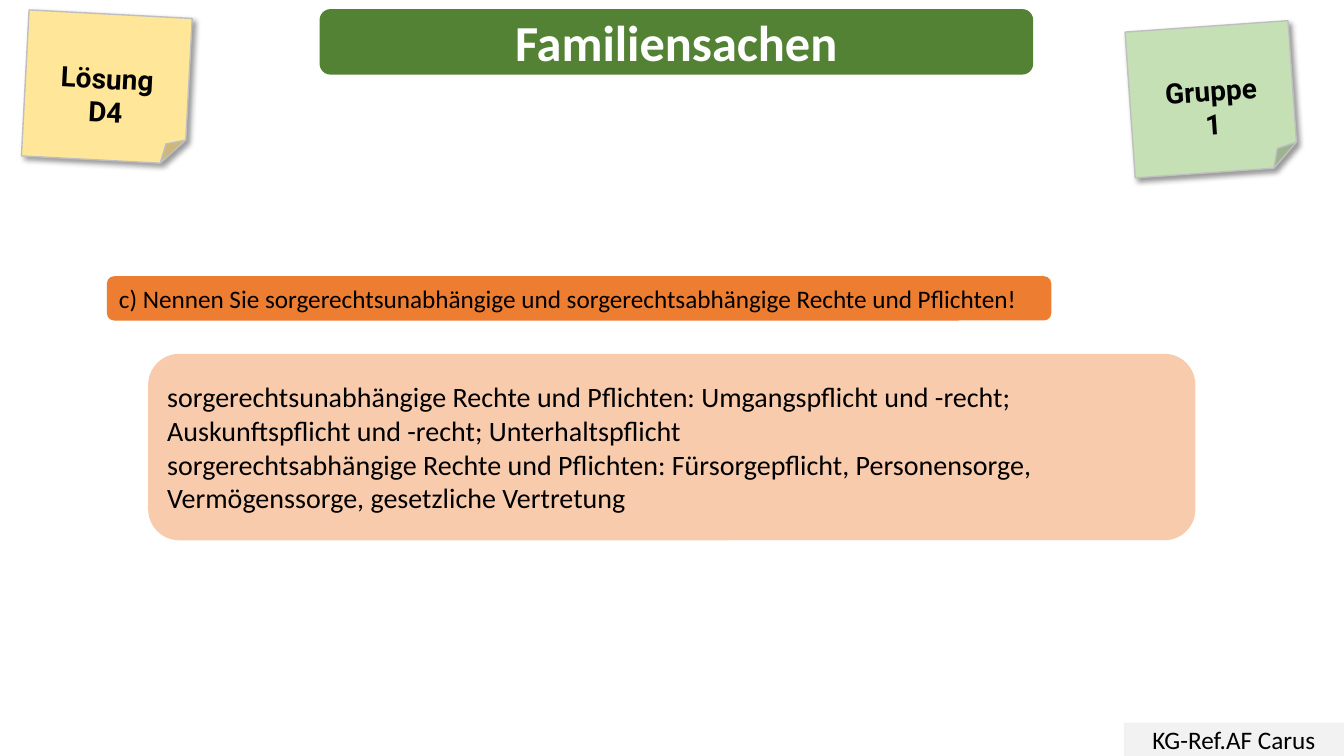
"""Build the Familiensachen solution slide."""
import dataclasses

import lxml.etree
import pptx
import pptx.dml.color
import pptx.enum.shapes
import pptx.enum.text
import pptx.oxml.ns
import pptx.shapes.autoshape
import pptx.slide
import pptx.text.text
import pptx.util

Color = pptx.dml.color.RGBColor
Shape = pptx.enum.shapes.MSO_SHAPE
Align = pptx.enum.text.PP_ALIGN

WIDTH = pptx.util.Inches(13.333)
HEIGHT = pptx.util.Inches(7.5)
COLUMNS, ROWS = 160, 90

BLACK = Color(0x00, 0x00, 0x00)
WHITE = Color(0xFF, 0xFF, 0xFF)
GREEN = Color(0x54, 0x82, 0x35)
ORANGE = Color(0xED, 0x7D, 0x31)
PEACH = Color(0xF8, 0xCB, 0xAD)
YELLOW = Color(0xFF, 0xE6, 0x99)
LIGHT_GREEN = Color(0xC5, 0xE0, 0xB4)
LIGHT_GRAY = Color(0xF2, 0xF2, 0xF2)
NOTE_EDGE = Color(0xBF, 0xBF, 0xBF)


@dataclasses.dataclass(frozen=True)
class Area:
    """Place on the grid, in columns and rows."""
    column: float
    row: float
    columns: float
    rows: float

    def emu(self) -> tuple[int, int, int, int]:
        """Return left, top, width and height as lengths."""
        return (round(WIDTH * self.column / COLUMNS), round(HEIGHT * self.row / ROWS),
                round(WIDTH * self.columns / COLUMNS), round(HEIGHT * self.rows / ROWS))


@dataclasses.dataclass(frozen=True)
class Style:
    """Look of the text in a box."""
    size: float
    color: Color = BLACK
    font: str = "Calibri"
    bold: bool = False
    align: Align = Align.CENTER


@dataclasses.dataclass(frozen=True)
class Panel:
    """Filled box with its paragraphs."""
    area: Area
    fill: Color
    style: Style
    lines: tuple[str, ...] = ()
    kind: Shape = Shape.ROUNDED_RECTANGLE


@dataclasses.dataclass(frozen=True)
class Note:
    """Tilted sticky note."""
    column: float
    row: float
    rotation: float
    fill: Color
    lines: tuple[str, ...]


TITLE_AREA = Area(38.04, 1.08, 84.96, 7.8)
TITLE_STYLE = Style(36, WHITE, bold=True)
NOTE_STYLE = Style(20, font="Roboto", bold=True)

PANELS = (
    Panel(TITLE_AREA, GREEN, TITLE_STYLE),
    Panel(Area(133.8, 86.04, 26.2, 3.96), LIGHT_GRAY, Style(18),
          ("KG-Ref.AF Carus",), Shape.RECTANGLE),
    Panel(Area(12.72, 32.88, 112.44, 5.28), ORANGE, Style(18, align=Align.LEFT),
          ("c) Nennen Sie sorgerechtsunabhängige und sorgerechtsabhängige "
           "Rechte und Pflichten!",)),
    Panel(Area(17.64, 42.12, 124.68, 22.2), PEACH, Style(20, align=Align.LEFT),
          ("sorgerechtsunabhängige Rechte und Pflichten: Umgangspflicht und -recht; "
           "Auskunftspflicht und -recht; Unterhaltspflicht",
           "sorgerechtsabhängige Rechte und Pflichten: Fürsorgepflicht, Personensorge, "
           "Vermögenssorge, gesetzliche Vertretung")),
)
NOTES = (
    Note(3, 1.68, 3, YELLOW, ("Lösung", "D4")),
    Note(134.52, 3.12, 356, LIGHT_GREEN, ("Gruppe", "1")),
)


def write(frame: pptx.text.text.TextFrame, lines: tuple[str, ...], style: Style) -> None:
    """Fill a text frame, one paragraph for each line."""
    frame.word_wrap = True
    frame.auto_size = pptx.enum.text.MSO_AUTO_SIZE.NONE
    frame.vertical_anchor = pptx.enum.text.MSO_ANCHOR.MIDDLE
    for index, line in enumerate(lines):
        para = frame.add_paragraph() if index else frame.paragraphs[0]
        para.alignment = style.align
        span = para.add_run()
        span.text = line
        span.font.name = style.font
        span.font.size = pptx.util.Pt(style.size)
        span.font.bold = style.bold
        span.font.color.rgb = style.color


def draw_panel(page: pptx.slide.Slide, panel: Panel) -> pptx.shapes.autoshape.Shape:
    """Draw a filled box without outline or shadow."""
    box = page.shapes.add_shape(panel.kind, *panel.area.emu())
    box.shadow.inherit = False
    box.fill.solid()
    box.fill.fore_color.rgb = panel.fill
    box.line.fill.background()
    write(box.text_frame, panel.lines, panel.style)
    return box


def add_shadow(box: pptx.shapes.autoshape.Shape) -> None:
    """Put a soft shadow at the lower right of a box."""
    tag = pptx.oxml.ns.qn
    effects = box.element.spPr.find(tag("a:effectLst"))
    shadow = lxml.etree.SubElement(
        effects, tag("a:outerShdw"), blurRad=str(pptx.util.Pt(4)),
        dist=str(pptx.util.Pt(3)), dir=str(45 * 60000), algn="tl", rotWithShape="0")
    color = lxml.etree.SubElement(shadow, tag("a:srgbClr"), val=str(BLACK))
    lxml.etree.SubElement(color, tag("a:alpha"), val="40000")


def draw_note(page: pptx.slide.Slide, note: Note) -> None:
    """Draw a sticky note with its text set low."""
    area = Area(note.column, note.row, 19.44, 17.4)
    box = draw_panel(page, Panel(area, note.fill, NOTE_STYLE, note.lines, Shape.FOLDED_CORNER))
    box.rotation = note.rotation
    box.line.color.rgb = NOTE_EDGE
    box.line.width = pptx.util.Pt(1)
    box.text_frame.margin_top = round(HEIGHT * 5.3 / ROWS)
    add_shadow(box)


def place_title(page: pptx.slide.Slide, text: str) -> None:
    """Set the title in front of its banner."""
    title = page.shapes.title
    title.left, title.top, title.width, title.height = TITLE_AREA.emu()
    write(title.text_frame, (text,), TITLE_STYLE)
    page.shapes.element.append(title.element)


def main() -> None:
    """Build and save the deck."""
    deck = pptx.Presentation()
    deck.slide_width, deck.slide_height = WIDTH, HEIGHT
    page = deck.slides.add_slide(deck.slide_layouts.get_by_name("Title Only"))
    for panel in PANELS:
        draw_panel(page, panel)
    for note in NOTES:
        draw_note(page, note)
    place_title(page, "Familiensachen")
    deck.save("out.pptx")


if __name__ == "__main__":
    main()
